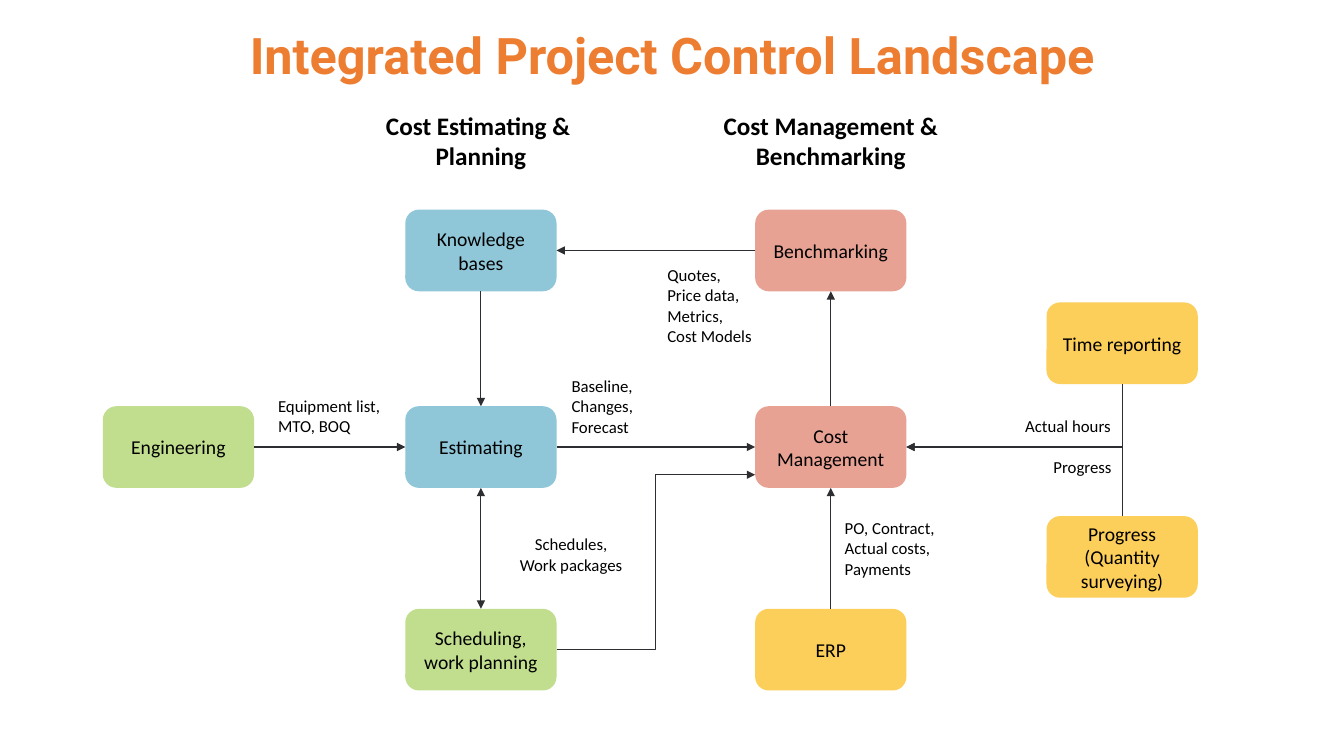
import pptx
import pptx.dml.color
import pptx.enum.shapes
import pptx.enum.text
import pptx.oxml.ns
import pptx.util
from lxml import etree
from pptx.util import Inches

ALIGN = pptx.enum.text.PP_ALIGN
SHAPE = pptx.enum.shapes.MSO_SHAPE
CONNECTOR = pptx.enum.shapes.MSO_CONNECTOR
TOP, LEFT, BOTTOM, RIGHT = range(4)

BLUE, GREEN, RED, YELLOW = "90C7D8", "C1DE8E", "E8A294", "FCCE5A"
BLACK, ORANGE, LINE = "000000", "ED7D31", "2D2E32"
BOX_WIDTH, BOX_HEIGHT = 1.5, 0.81
ENGINEERING_X, PLANNING_X, COST_X, REPORTING_X = 1.02, 4.02, 7.49, 10.38
UPPER_Y, MIDDLE_Y, LOWER_Y = 2.08, 4.03, 6.04

BOXES = [
    ("Knowledge bases", PLANNING_X, UPPER_Y, BLUE),
    ("Estimating", PLANNING_X, MIDDLE_Y, BLUE),
    ("Engineering", ENGINEERING_X, MIDDLE_Y, GREEN),
    ("Scheduling, work planning", PLANNING_X, LOWER_Y, GREEN),
    ("Cost Management", COST_X, MIDDLE_Y, RED),
    ("Benchmarking", COST_X, UPPER_Y, RED),
    ("Progress (Quantity surveying)", REPORTING_X, 5.12, YELLOW),
    ("Time reporting", REPORTING_X, 3, YELLOW),
    ("ERP", COST_X, LOWER_Y, YELLOW),
]

ARROWS = [
    ("Engineering", RIGHT, "Estimating", LEFT),
    ("Estimating", RIGHT, "Cost Management", LEFT),
    ("Cost Management", TOP, "Benchmarking", BOTTOM),
    ("Benchmarking", LEFT, "Knowledge bases", RIGHT),
    ("ERP", TOP, "Cost Management", BOTTOM),
    ("Knowledge bases", BOTTOM, "Estimating", TOP),
]

# Paragraphs, left, top, width, height, alignment, wrap
LABELS = [
    (["Equipment list, \nMTO, BOQ"], 2.66, 3.88, 1.26, 0.5, ALIGN.LEFT, False),
    (["Baseline,\nChanges,\nForecast"], 5.57, 3.68, 0.82, 0.71, ALIGN.LEFT, False),
    (["Schedules,\nWork packages"], 5.05, 5.25, 1.23, 0.5, ALIGN.CENTER, False),
    (["Progress"], 10.35, 4.48, 0.79, 0.3, ALIGN.LEFT, False),
    (["Actual hours"], 10.07, 4.08, 1.06, 0.3, ALIGN.LEFT, False),
    (["Quotes,\nPrice data,\nMetrics,\nCost Models"],
     6.52, 2.58, 1.05, 0.91, ALIGN.LEFT, True),
    (["PO, Contract,\nActual costs,", "Payments"],
     8.28, 5.09, 1.2, 0.71, ALIGN.LEFT, True),
]


def colour(value):
    return pptx.dml.color.RGBColor.from_string(value)


def write(frame, paragraphs, size, align, font="Calibri", ink=BLACK, bold=False):
    """Fill a text frame; a newline inside a paragraph is a line break."""
    for number, text in enumerate(paragraphs):
        para = frame.add_paragraph() if number else frame.paragraphs[0]
        para.alignment = align
        for row, line in enumerate(text.split("\n")):
            if row:
                para.add_line_break()
            span = para.add_run()
            span.text = line
            span.font.size = pptx.util.Pt(size)
            span.font.name = font
            span.font.bold = bold
            span.font.color.rgb = colour(ink)


def add_box(page, text, left, top, fill):
    box = page.shapes.add_shape(SHAPE.ROUNDED_RECTANGLE, Inches(left), Inches(top),
                                Inches(BOX_WIDTH), Inches(BOX_HEIGHT))
    box.shadow.inherit = False
    box.fill.solid()
    box.fill.fore_color.rgb = colour(fill)
    box.line.fill.background()
    box.text_frame.word_wrap = True
    box.text_frame.vertical_anchor = pptx.enum.text.MSO_ANCHOR.MIDDLE
    write(box.text_frame, [text], 14, ALIGN.CENTER)
    return box


def add_text(page, paragraphs, left, top, width, height, align, wrap=True,
             size=12, **style):
    box = page.shapes.add_textbox(Inches(left), Inches(top),
                                  Inches(width), Inches(height))
    box.text_frame.word_wrap = wrap
    box.text_frame.auto_size = pptx.enum.text.MSO_AUTO_SIZE.SHAPE_TO_FIT_TEXT
    write(box.text_frame, paragraphs, size, align, **style)


def add_arrow(page, kind, source, source_side, target=None, target_side=None,
              end=(0, 0), both=False):
    """Join two boxes, or run from a box to a free end point in inches."""
    arrow = page.shapes.add_connector(kind, 0, 0, Inches(end[0]), Inches(end[1]))
    arrow.begin_connect(source, source_side)
    if target is not None:
        arrow.end_connect(target, target_side)
    arrow.line.color.rgb = colour(LINE)
    arrow.line.width = pptx.util.Pt(0.75)
    line = arrow.line._get_or_add_ln()
    for tag in ("a:headEnd", "a:tailEnd") if both else ("a:tailEnd",):
        etree.SubElement(line, pptx.oxml.ns.qn(tag), type="triangle")
    etree.SubElement(arrow._element.spPr, pptx.oxml.ns.qn("a:effectLst"))
    return arrow


def add_corner_arrow(page, source, source_side, target):
    """Leave the source vertically, turn once and go left into the target."""
    arrow = add_arrow(page, CONNECTOR.ELBOW, source, source_side, target, RIGHT)
    center_x, center_y = arrow.left + arrow.width // 2, arrow.top + arrow.height // 2
    arrow.width, arrow.height = arrow.height, arrow.width
    arrow.left, arrow.top = center_x - arrow.width // 2, center_y - arrow.height // 2
    properties = arrow._element.spPr
    properties.find(pptx.oxml.ns.qn("a:prstGeom")).set("prst", "bentConnector2")
    frame = properties.find(pptx.oxml.ns.qn("a:xfrm"))
    frame.attrib.pop("flipH", None)
    frame.set("rot", str((270 if source_side == TOP else 90) * 60000))


def main():
    deck = pptx.Presentation()
    deck.slide_width, deck.slide_height = Inches(13.33), Inches(7.5)
    page = deck.slides.add_slide(deck.slide_layouts[6])

    boxes = {name: add_box(page, name, left, top, fill)
             for name, left, top, fill in BOXES}
    for source, source_side, target, target_side in ARROWS:
        add_arrow(page, CONNECTOR.STRAIGHT, boxes[source], source_side,
                  boxes[target], target_side)
    scheduling = boxes["Scheduling, work planning"]
    add_arrow(page, CONNECTOR.STRAIGHT, scheduling, TOP,
              boxes["Estimating"], BOTTOM, both=True)
    add_arrow(page, CONNECTOR.ELBOW, scheduling, RIGHT, end=(COST_X, 4.71))
    cost = boxes["Cost Management"]
    add_corner_arrow(page, boxes["Progress (Quantity surveying)"], TOP, cost)
    add_corner_arrow(page, boxes["Time reporting"], BOTTOM, cost)

    for label in LABELS:
        add_text(page, *label)
    for heading, left in (("Cost Estimating & \nPlanning", 3.06),
                          ("Cost Management & Benchmarking", 6.53)):
        add_text(page, [heading], left, 1.04, 3.42, 0.71, ALIGN.CENTER,
                 size=18, bold=True)
    add_text(page, ["Integrated Project Control Landscape"], 1.88, 0.19, 9.58, 0.71,
             ALIGN.CENTER, size=36, font="Roboto", ink=ORANGE, bold=True)
    deck.save("out.pptx")


if __name__ == "__main__":
    main()
